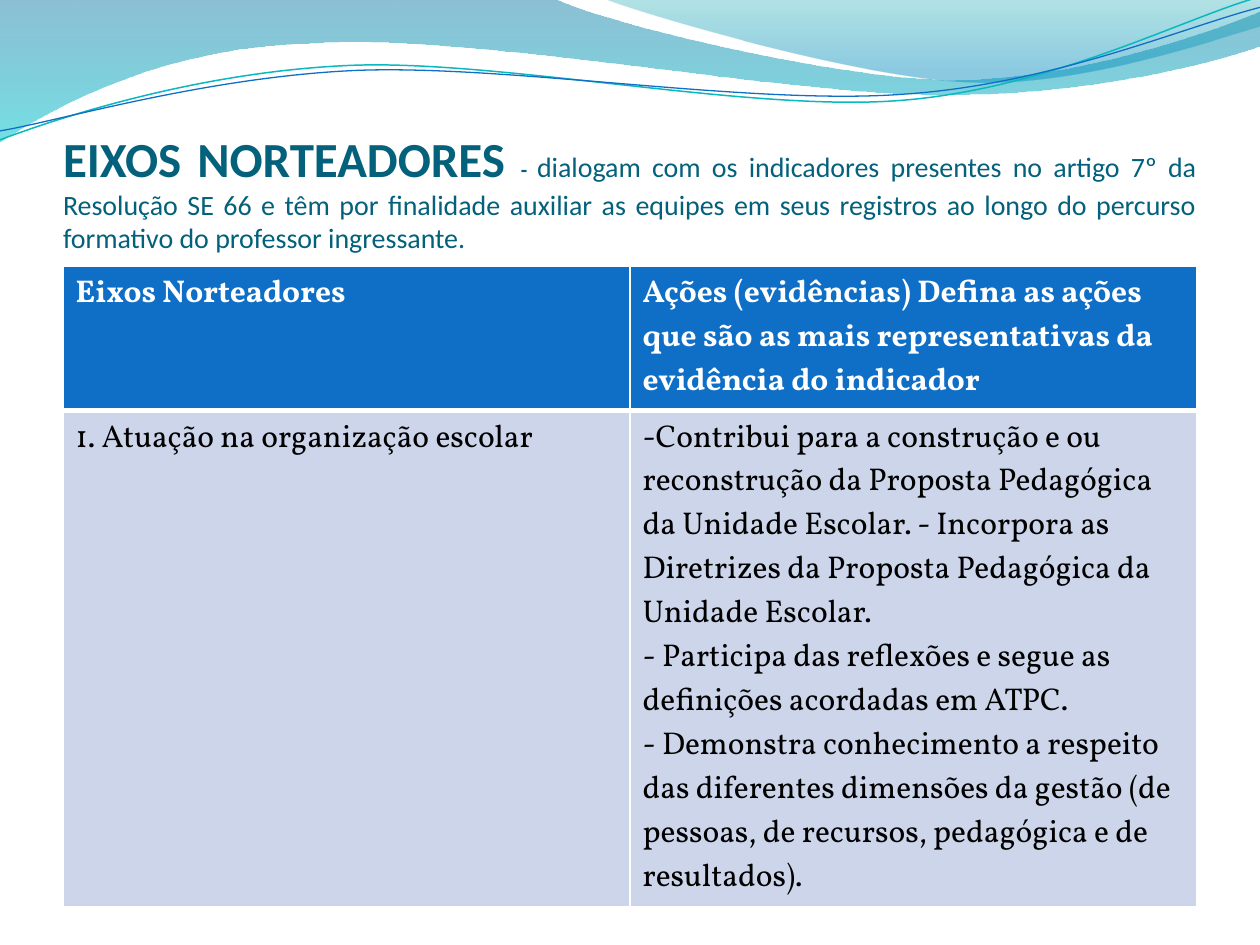
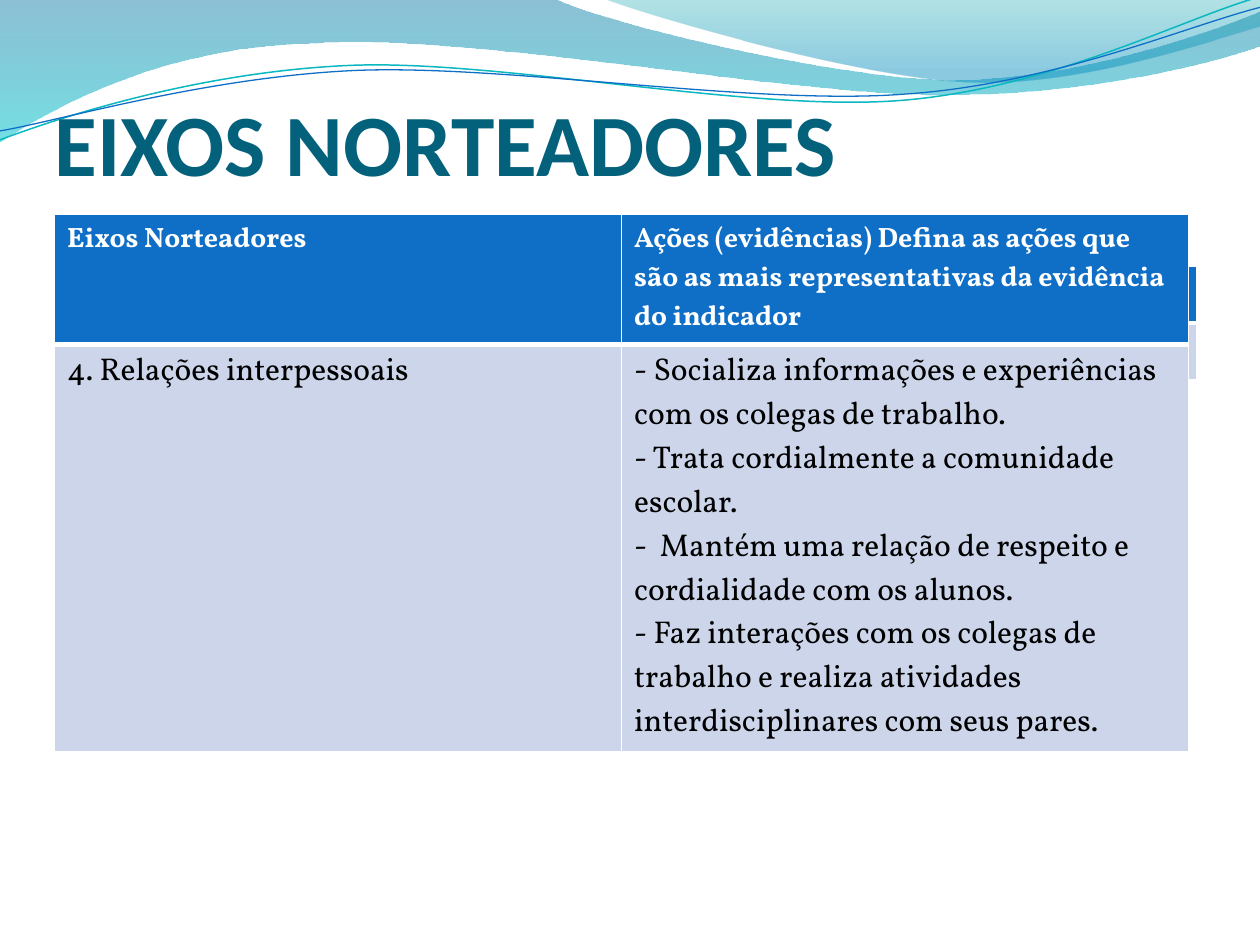
"""Build two slides on guiding axes, each with a title and a table under a shared wave header."""
from dataclasses import dataclass
from typing import Any, Optional

import pptx
import pptx.dml.color
import pptx.enum.text
import pptx.oxml.ns
import pptx.util

Cm, Pt = pptx.util.Cm, pptx.util.Pt
RGBColor = pptx.dml.color.RGBColor
PP_ALIGN = pptx.enum.text.PP_ALIGN
qn = pptx.oxml.ns.qn

WHITE = RGBColor(0xFF, 0xFF, 0xFF)
BLACK = RGBColor(0x00, 0x00, 0x00)
TITLE_TEAL = RGBColor(0x04, 0x61, 0x7B)
BLUE = RGBColor(0x0F, 0x6F, 0xC6)
BODY_FILL = RGBColor(0xCC, 0xD5, 0xEA)
DEEP_BLUE = RGBColor(0x00, 0x74, 0xA1)
CYAN = RGBColor(0x00, 0xC6, 0xCF)
TEAL = RGBColor(0x00, 0xA1, 0xA9)
SKY = RGBColor(0x00, 0x8B, 0xBF)
TURQUOISE = RGBColor(0x0A, 0xB8, 0xBF)

TITLE_FONT, TABLE_FONT = "Calibri", "Vollkorn"
TITLE_FRAME = {"auto_size": pptx.enum.text.MSO_AUTO_SIZE.NONE, "word_wrap": True,
               "vertical_anchor": pptx.enum.text.MSO_ANCHOR.BOTTOM,
               "margin_left": 0, "margin_top": Cm(0.13), "margin_right": 0, "margin_bottom": 0}
TABLE_FLAGS = {"first_row": True, "horz_banding": False}
BODY_FONT = {"name": TABLE_FONT, "size": Pt(18), "bold": False}
CONTENT_WIDTH, TITLE_HEIGHT = 22.86, 3.18

AXES_HEADER = "Eixos Norteadores"
ACTIONS_HEADER = ("Ações (evidências) Defina as ações que são as mais "
                  "representativas da evidência do indicador")

Point = tuple[float, float]


@dataclass(frozen=True)
class Stop:
    position: float
    color: RGBColor
    opacity: int


@dataclass(frozen=True)
class Wave:
    """An outline in cm; a segment of one point is straight, of three points a Bézier."""
    start: Point
    segments: list[tuple[Point, ...]]
    stops: tuple[Stop, ...] = ()
    line: Optional[RGBColor] = None
    width: float = 0


@dataclass(frozen=True)
class TitleRun:
    text: str
    size: float
    bold: bool = True


@dataclass(frozen=True)
class Grid:
    left: float
    top: float
    height: float
    row_heights: tuple[float, float] = (1.03, 1.03)
    axis: str = ""
    actions: tuple[str, ...] = ()
    header_size: float = 18


@dataclass(frozen=True)
class SlideContent:
    title_at: Point
    align: PP_ALIGN
    runs: list[TitleRun]
    grids: list[Grid]


WAVES = [
    Wave((0, 0), [
        ((11.18, -0.03),),
        ((12.09, 0.43), (16.87, 1.6), (19.25, 1.6)),
        ((21.67, 1.6), (24.33, 0.66), (25.4, 0.23)),
        ((25.43, 0.91),),
        ((24.97, 1.12), (22.1, 1.93), (18.95, 1.91)),
        ((15.8, 1.91), (9.7, 0.71), (6.53, 0.86)),
        ((3.28, 0.91), (1.17, 2.11), (-0.03, 2.87)),
        ((0, 0),),
    ], stops=(Stop(0, DEEP_BLUE, 45), Stop(1, CYAN, 55))),
    Wave((12.17, -0.03), [
        ((12.93, 0.28), (17.32, 1.57), (19.53, 1.65)),
        ((21.74, 1.75), (24.41, 0.81), (25.4, 0.53)),
        ((25.4, 0),),
        ((12.17, -0.03),),
    ], stops=(Stop(0, TEAL, 30), Stop(0.8, SKY, 45))),
    Wave((0, 2.82), [
        ((1.22, 2.36), (4.01, 1.45), (7.04, 1.32)),
        ((10.03, 1.19), (15.06, 2.26), (18.11, 2.03)),
        ((21.16, 1.8), (23.83, 0.38), (25.35, -0.05)),
    ], line=TURQUOISE, width=0.85),
    Wave((0, 2.64), [
        ((1.19, 2.44), (4.17, 1.55), (7.19, 1.42)),
        ((10.24, 1.3), (15.16, 2.13), (18.21, 1.9)),
        ((21.23, 1.7), (23.9, 0.53), (25.4, 0.15)),
    ], line=BLUE, width=0.75),
]

SLIDES = [
    SlideContent((1.27, 1.95), PP_ALIGN.JUSTIFY, [
        TitleRun("EIXOS NORTEADORES ", 28),
        TitleRun("- ", 12),
        TitleRun("dialogam com os indicadores presentes no artigo 7º da Resolução SE 66 e têm por "
                 "finalidade auxiliar as equipes em seus registros ao longo do percurso formativo "
                 "do professor ingressante.", 16, bold=False),
    ], [
        Grid(1.27, 5.37, 11.18, axis="1. Atuação na organização escolar", actions=(
            "Contribui para a construção e ou reconstrução da Proposta Pedagógica da Unidade "
            "Escolar. - Incorpora as Diretrizes da Proposta Pedagógica da Unidade Escolar.",
            " Participa das reflexões e segue as definições acordadas em ATPC.",
            " Demonstra conhecimento a respeito das diferentes dimensões da gestão (de pessoas, "
            "de recursos, pedagógica e de resultados).",
        )),
    ]),
    SlideContent((1.1, 0.73), PP_ALIGN.LEFT, [TitleRun("EIXOS NORTEADORES", 50)], [
        Grid(1.27, 5.37, 2.06),
        Grid(1.1, 4.32, 10.46, (2.06, 8.18), "4. Relações interpessoais", (
            " Socializa informações e experiências com os colegas de trabalho.",
            " Trata cordialmente a comunidade escolar.",
            "  Mantém uma relação de respeito e cordialidade com os alunos.",
            " Faz interações com os colegas de trabalho e realiza atividades "
            "interdisciplinares com seus pares.",
        ), header_size=16),
    ]),
]


def apply_format(target: Any, values: dict[str, Any]) -> None:
    """Set each named attribute on the target."""
    for name, value in values.items():
        setattr(target, name, value)


def add_child(parent: Any, tag: str, **attributes: str) -> Any:
    """Append an XML child and return it."""
    child = parent.makeelement(qn(tag), attributes)
    parent.append(child)
    return child


def add_run(p: Any, text: str, color: RGBColor, **font: Any) -> None:
    """Append a formatted run to a paragraph."""
    r = p.add_run()
    r.text = text
    apply_format(r.font, font)
    r.font.color.rgb = color


def bend_segments(sp: Any, wave: Wave) -> None:
    """Join the three line steps of each curved segment into one Bézier."""
    steps = iter(list(sp.element.spPr.iter(qn("a:lnTo"))))
    for segment in wave.segments:
        group = [next(steps) for _ in segment]
        if len(group) == 3:
            curve = group[0].makeelement(qn("a:cubicBezTo"), {})
            group[0].addprevious(curve)
            for step in group:
                curve.append(step[0])
                step.getparent().remove(step)


def draw_wave(s: Any, wave: Wave) -> Any:
    """Draw one wave as a gradient band or a thin line."""
    points = [(Cm(x), Cm(y)) for segment in wave.segments for x, y in segment]
    builder = s.shapes.build_freeform(*map(Cm, wave.start))
    builder.add_line_segments(points, close=bool(wave.stops))
    sp = builder.convert_to_shape()
    bend_segments(sp, wave)
    sp.shadow.inherit = False
    if wave.stops:
        sp.line.fill.background()
        sp.fill.gradient()
        sp.fill.gradient_angle = 270
        for gs, stop in zip(sp.fill.gradient_stops, wave.stops):
            gs.position = stop.position
            gs.color.rgb = stop.color
        for clr, stop in zip(sp.element.spPr.iter(qn("a:srgbClr")), wave.stops):
            add_child(clr, "a:alpha", val=str(stop.opacity * 1000))
    else:
        sp.fill.background()
        sp.line.color.rgb = wave.line
        sp.line.width = Pt(wave.width)
    return sp


def move_waves_to_layout(s: Any, layout: Any) -> None:
    """Draw the waves and keep them on the layout that the slides share."""
    for ph in list(layout.placeholders):
        if ph.placeholder_format.idx != 0:
            ph.element.getparent().remove(ph.element)
    for sp in [draw_wave(s, wave) for wave in WAVES]:
        layout.shapes.element.append(sp.element)


def format_title(s: Any, content: SlideContent) -> None:
    """Place and fill the title placeholder."""
    sp = s.shapes.title
    left, top = content.title_at
    apply_format(sp, {"left": Cm(left), "top": Cm(top),
                      "width": Cm(CONTENT_WIDTH), "height": Cm(TITLE_HEIGHT)})
    apply_format(sp.text_frame, TITLE_FRAME)
    p = sp.text_frame.paragraphs[0]
    p.alignment = content.align
    for run in content.runs:
        add_run(p, run.text, TITLE_TEAL, name=TITLE_FONT, size=Pt(run.size), bold=run.bold)


def format_cell(cell: Any, fill: RGBColor, top: float, bottom: float) -> None:
    """Give a cell white borders and a solid fill."""
    tc_pr = cell._tc.get_or_add_tcPr()
    for tag, width in {"a:lnL": 1, "a:lnR": 1, "a:lnT": top, "a:lnB": bottom}.items():
        ln = add_child(tc_pr, tag, w=str(Pt(width)))
        add_child(add_child(ln, "a:solidFill"), "a:srgbClr", val=str(WHITE))
    cell.fill.solid()
    cell.fill.fore_color.rgb = fill


def add_dash(p: Any) -> None:
    """Mark a paragraph with a dash bullet and no indent."""
    p_pr = p._p.get_or_add_pPr()
    for name in ("marL", "indent"):
        p_pr.set(name, "0")
    add_child(p_pr, "a:buFont", typeface=TABLE_FONT)
    add_child(p_pr, "a:buChar", char="-")


def draw_grid(s: Any, grid: Grid) -> None:
    """Draw a table of one header row and one body row."""
    frame = s.shapes.add_table(2, 2, Cm(grid.left), Cm(grid.top),
                               Cm(CONTENT_WIDTH), Cm(grid.height))
    table = frame.table
    apply_format(table, TABLE_FLAGS)
    for row, height in zip(table.rows, grid.row_heights):
        row.height = Cm(height)
    frame.height = Cm(grid.height)
    for header, body in zip(table.rows[0].cells, table.rows[1].cells):
        format_cell(header, BLUE, top=1, bottom=3)
        format_cell(body, BODY_FILL, top=3, bottom=1)
    if not grid.axis:
        for cell in table.iter_cells():
            end = add_child(cell.text_frame.paragraphs[0]._p, "a:endParaRPr", sz="1800")
            add_child(end, "a:latin", typeface=TABLE_FONT)
        return
    for cell, text in zip(table.rows[0].cells, (AXES_HEADER, ACTIONS_HEADER)):
        add_run(cell.text_frame.paragraphs[0], text, WHITE,
                name=TABLE_FONT, size=Pt(grid.header_size), bold=True)
    add_run(table.cell(1, 0).text_frame.paragraphs[0], grid.axis, BLACK, **BODY_FONT)
    tf = table.cell(1, 1).text_frame
    for i, action in enumerate(grid.actions):
        p = tf.add_paragraph() if i else tf.paragraphs[0]
        add_dash(p)
        add_run(p, action, BLACK, **BODY_FONT)


def main() -> None:
    """Build and save the presentation."""
    prs = pptx.Presentation()
    apply_format(prs, {"slide_width": Cm(25.4), "slide_height": Cm(19.05)})
    layout = prs.slide_layouts[5]
    for i, content in enumerate(SLIDES):
        s = prs.slides.add_slide(layout)
        if i == 0:
            move_waves_to_layout(s, layout)
        format_title(s, content)
        for grid in content.grids:
            draw_grid(s, grid)
    prs.save("out.pptx")


if __name__ == "__main__":
    main()
